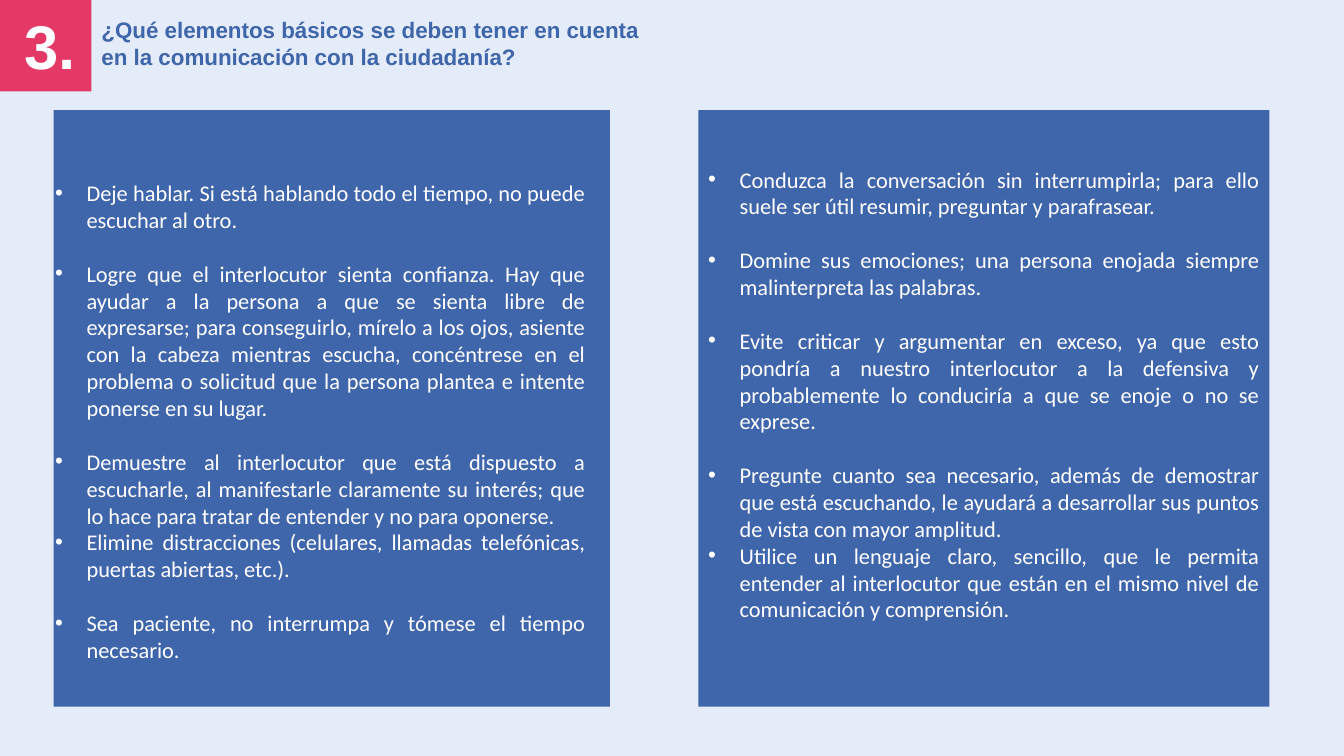
from dataclasses import dataclass

from lxml import etree
from pptx import Presentation
from pptx import util as u
from pptx.dml.color import RGBColor
from pptx.enum import shapes, text
from pptx.oxml.ns import qn

EMU_PER_PX = 9525
SKY = RGBColor(0xE3, 0xEC, 0xF8)
BLUE = RGBColor(0x3F, 0x65, 0xAA)
PINK = RGBColor(0xE4, 0x38, 0x66)
WHITE = RGBColor(0xFF, 0xFF, 0xFF)
INDENT = 30
BODY_SIZE = 16
BLANK_LINE = 19.2


@dataclass(frozen=True)
class Box:
    left: int
    top: int
    width: int
    height: int

    def emu(self) -> tuple:
        return tuple(px(v) for v in (self.left, self.top, self.width, self.height))


@dataclass(frozen=True)
class Advice:
    words: str
    gap_after: bool = True


LEFT_PANEL = Box(51, 105, 530, 568)
RIGHT_PANEL = Box(665, 105, 544, 568)
BADGE = Box(0, 0, 87, 87)
NUMBER = Box(14, 3, 73, 81)
HEADING = Box(87, 11, 548, 87)
LISTENING_TEXT = Box(43, 166, 524, 538)

LISTENING = [
    Advice("Deje hablar. Si está hablando todo el tiempo, no puede escuchar al otro."),
    Advice("Logre que el interlocutor sienta confianza. Hay que ayudar a la persona a que "
           "se sienta libre de expresarse; para conseguirlo, mírelo a los ojos, asiente con "
           "la cabeza mientras escucha, concéntrese en el problema o solicitud que la "
           "persona plantea e intente ponerse en su lugar."),
    Advice("Demuestre al interlocutor que está dispuesto a escucharle, al manifestarle "
           "claramente su interés; que lo hace para tratar de entender y no para oponerse.",
           gap_after=False),
    Advice("Elimine distracciones (celulares, llamadas telefónicas, puertas abiertas, etc.)."),
    Advice("Sea paciente, no interrumpa y tómese el tiempo necesario.", gap_after=False),
]
CONVERSING = [
    Advice("Conduzca la conversación sin interrumpirla; para ello suele ser útil resumir, "
           "preguntar y parafrasear."),
    Advice("Domine sus emociones; una persona enojada siempre malinterpreta las palabras."),
    Advice("Evite criticar y argumentar en exceso, ya que esto pondría a nuestro "
           "interlocutor a la defensiva y probablemente lo conduciría a que se enoje o no "
           "se exprese."),
    Advice("Pregunte cuanto sea necesario, además de demostrar que está escuchando, le "
           "ayudará a desarrollar sus puntos de vista con mayor amplitud.", gap_after=False),
    Advice("Utilice un lenguaje claro, sencillo, que le permita entender al interlocutor "
           "que están en el mismo nivel de comunicación y comprensión.", gap_after=False),
]


def px(value: int) -> u.Emu:
    return u.Emu(value * EMU_PER_PX)


def add_panel(slide, box: Box, color: RGBColor):
    panel = slide.shapes.add_shape(shapes.MSO_SHAPE.RECTANGLE, *box.emu())
    panel.shadow.inherit = False
    panel.fill.solid()
    panel.fill.fore_color.rgb = color
    panel.line.fill.background()
    return panel


def add_frame(slide, box: Box):
    frame = slide.shapes.add_textbox(*box.emu()).text_frame
    frame.word_wrap = True
    return frame


def add_run(paragraph, words: str, size: int, color: RGBColor,
            font: str = "Arial", bold: bool = True) -> None:
    run = paragraph.add_run()
    run.text = words
    run.font.name = font
    run.font.size = u.Pt(size)
    run.font.bold = bold
    run.font.color.rgb = color


def add_bullets(frame, advices: list[Advice]) -> None:
    for index, advice in enumerate(advices):
        paragraph = frame.add_paragraph() if index else frame.paragraphs[0]
        paragraph.alignment = text.PP_ALIGN.JUSTIFY
        paragraph.space_after = u.Pt(BLANK_LINE if advice.gap_after else 0)
        add_run(paragraph, advice.words, BODY_SIZE, WHITE, "Calibri", False)
        # Hanging bullet
        props = paragraph._p.get_or_add_pPr()
        props.set("marL", str(px(INDENT)))
        props.set("indent", str(-px(INDENT)))
        etree.SubElement(props, qn("a:buFont"), typeface="Arial")
        etree.SubElement(props, qn("a:buChar"), char="•")


def main() -> None:
    prs = Presentation()
    prs.slide_width, prs.slide_height = px(1280), px(720)
    slide = prs.slides.add_slide(prs.slide_layouts[5])
    slide.background.fill.solid()
    slide.background.fill.fore_color.rgb = SKY

    # Heading with its number
    heading = slide.shapes.title
    heading.left, heading.top, heading.width, heading.height = HEADING.emu()
    heading.text_frame.word_wrap = True
    heading.text_frame.auto_size = text.MSO_AUTO_SIZE.NONE
    heading.text_frame.vertical_anchor = text.MSO_ANCHOR.TOP
    question = heading.text_frame.paragraphs[0]
    question.alignment = text.PP_ALIGN.LEFT
    add_run(question, "¿Qué elementos básicos se deben tener en cuenta en la "
            "comunicación con la ciudadanía?", 16, BLUE)
    add_panel(slide, BADGE, PINK)
    add_run(add_frame(slide, NUMBER).paragraphs[0], "3.", 44, WHITE)

    # Left panel: listening
    add_panel(slide, LEFT_PANEL, BLUE)
    add_bullets(add_frame(slide, LISTENING_TEXT), LISTENING)

    # Right panel: conversing, set slightly above the middle
    conversing = add_panel(slide, RIGHT_PANEL, BLUE).text_frame
    conversing.word_wrap = True
    conversing.vertical_anchor = text.MSO_ANCHOR.MIDDLE
    conversing.margin_bottom = px(32)
    add_bullets(conversing, CONVERSING)

    prs.save("out.pptx")


if __name__ == "__main__":
    main()
